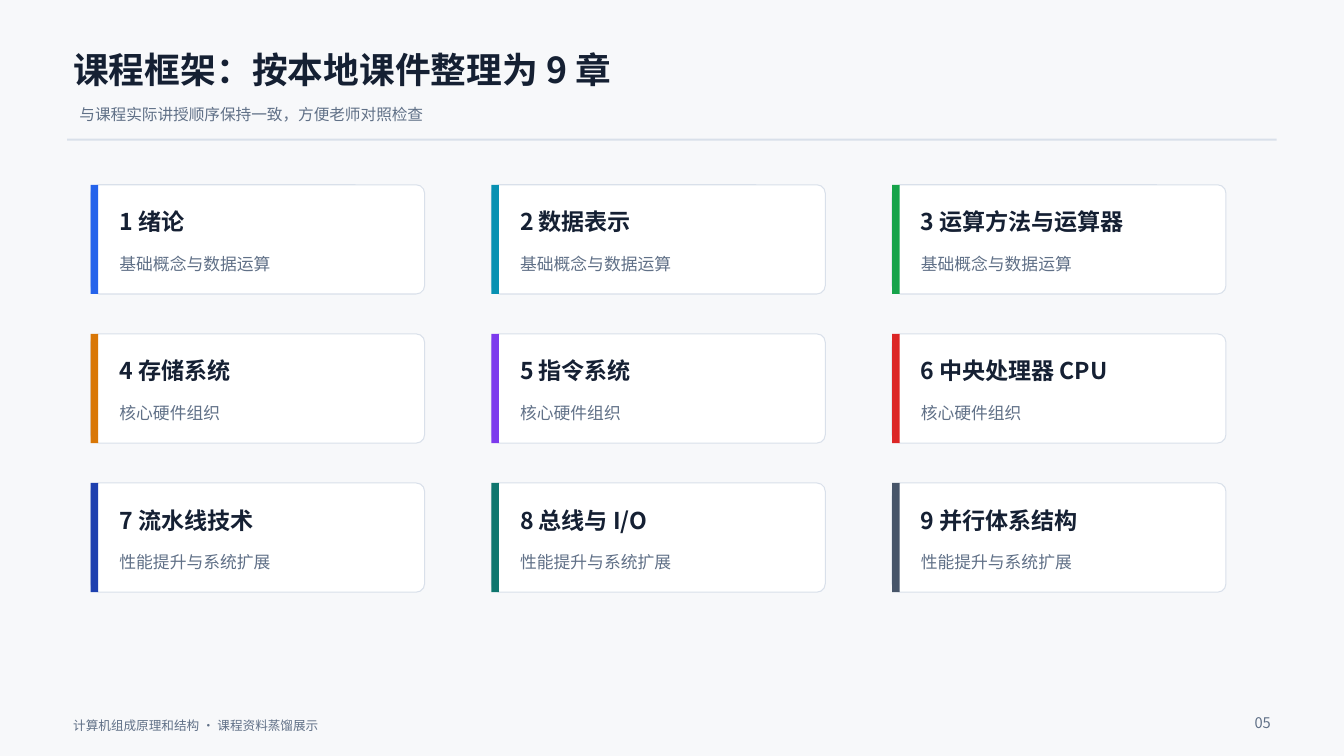
from lxml.etree import SubElement
from pptx import Presentation
from pptx.dml.color import RGBColor
from pptx.enum.shapes import MSO_SHAPE
from pptx.enum.text import MSO_ANCHOR, PP_ALIGN
from pptx.oxml.ns import qn
from pptx.util import Inches, Pt

COLORS = {
    "background": "F7F8FA",
    "card": "FFFFFF",
    "border": "D9E0EA",
    "heading": "152033",
    "muted": "607087",
    "blue": "2563EB",
    "cyan": "0891B2",
    "green": "16A34A",
    "amber": "D97706",
    "violet": "7C3AED",
    "red": "DC2626",
    "navy": "1E40AF",
    "teal": "0F766E",
    "slate": "475569",
}

GRID_COLUMNS, GRID_ROWS = 160, 90
CARDS_PER_ROW = 3
CARD_LEFT, CARD_TOP = 10.8, 22
CARD_WIDTH, CARD_HEIGHT = 39.75, 13
CARD_COLUMN_STEP, CARD_ROW_STEP = 47.7, 17.75

TOPICS = ["基础概念与数据运算", "核心硬件组织", "性能提升与系统扩展"]
CHAPTERS = [
    ("绪论", "blue"),
    ("数据表示", "cyan"),
    ("运算方法与运算器", "green"),
    ("存储系统", "amber"),
    ("指令系统", "violet"),
    ("中央处理器 CPU", "red"),
    ("流水线技术", "navy"),
    ("总线与 I/O", "teal"),
    ("并行体系结构", "slate"),
]


class SlideBuilder:
    """Draws on one slide; every box is (column, row, columns wide, rows high)."""

    font_name = "Noto Sans CJK SC"

    def __init__(self, presentation):
        self.slide = presentation.slides.add_slide(presentation.slide_layouts[6])
        self.column = presentation.slide_width / GRID_COLUMNS
        self.row = presentation.slide_height / GRID_ROWS

    def place(self, box):
        """Turn a grid box into slide lengths."""
        units = (self.column, self.row, self.column, self.row)
        return [round(length * unit) for length, unit in zip(box, units)]

    def rectangle(self, box, fill, line=None, corner=None):
        kind = MSO_SHAPE.RECTANGLE if corner is None else MSO_SHAPE.ROUNDED_RECTANGLE
        shape = self.slide.shapes.add_shape(kind, *self.place(box))
        shape.shadow.inherit = False
        shape.fill.solid()
        shape.fill.fore_color.rgb = RGBColor.from_string(COLORS[fill])
        if corner is not None:
            shape.adjustments[0] = corner
        if line:
            shape.line.color.rgb = RGBColor.from_string(COLORS[line])
            shape.line.width = Pt(0.75)
        else:
            shape.line.fill.background()

    def text(self, box, text, size, color="muted", bold=False, align=PP_ALIGN.LEFT):
        frame = self.slide.shapes.add_textbox(*self.place(box)).text_frame
        frame.word_wrap = True
        frame.vertical_anchor = MSO_ANCHOR.TOP
        frame.margin_left = frame.margin_right = Inches(0.06)
        frame.margin_top = frame.margin_bottom = Inches(0.04)
        paragraph = frame.paragraphs[0]
        paragraph.alignment = align
        run = paragraph.add_run()
        run.text = text
        run.font.size = Pt(size)
        run.font.bold = bold
        run.font.color.rgb = RGBColor.from_string(COLORS[color])
        run.font.name = self.font_name
        east_asian = SubElement(run._r.get_or_add_rPr(), qn("a:ea"))
        east_asian.set("typeface", self.font_name)

    def card(self, left, top, title, topic, accent):
        self.rectangle((left, top, CARD_WIDTH, CARD_HEIGHT), "card", "border", 0.077)
        self.rectangle((left, top, 0.9, CARD_HEIGHT), accent)
        self.text((left + 2.7, top + 2.25, 34.2, 4.2), title, 16.5, "heading", bold=True)
        self.text((left + 2.7, top + 7.75, 34.2, 3.25), topic, 12)


def main():
    presentation = Presentation()
    presentation.slide_width = Inches(13.333)
    presentation.slide_height = Inches(7.5)
    builder = SlideBuilder(presentation)

    builder.rectangle((0, 0, GRID_COLUMNS, GRID_ROWS), "background")
    builder.text((8, 5.25, 112.5, 7.2), "课程框架：按本地课件整理为 9 章", 25.5, "heading", bold=True)
    builder.text((8.75, 12, 95, 4), "与课程实际讲授顺序保持一致，方便老师对照检查", 11.2)
    builder.rectangle((8, 16.5, 144, 0.25), "border")

    for index, (name, accent) in enumerate(CHAPTERS):
        card_row, card_column = divmod(index, CARDS_PER_ROW)
        builder.card(
            CARD_LEFT + card_column * CARD_COLUMN_STEP,
            CARD_TOP + card_row * CARD_ROW_STEP,
            f"{index + 1} {name}",
            TOPICS[card_row],
            accent,
        )

    builder.text((8, 85, 65, 3), "计算机组成原理和结构 · 课程资料蒸馏展示", 9)
    builder.text((145, 84.5, 7, 3.5), "05", 10.5, align=PP_ALIGN.RIGHT)
    presentation.save("out.pptx")


if __name__ == "__main__":
    main()
